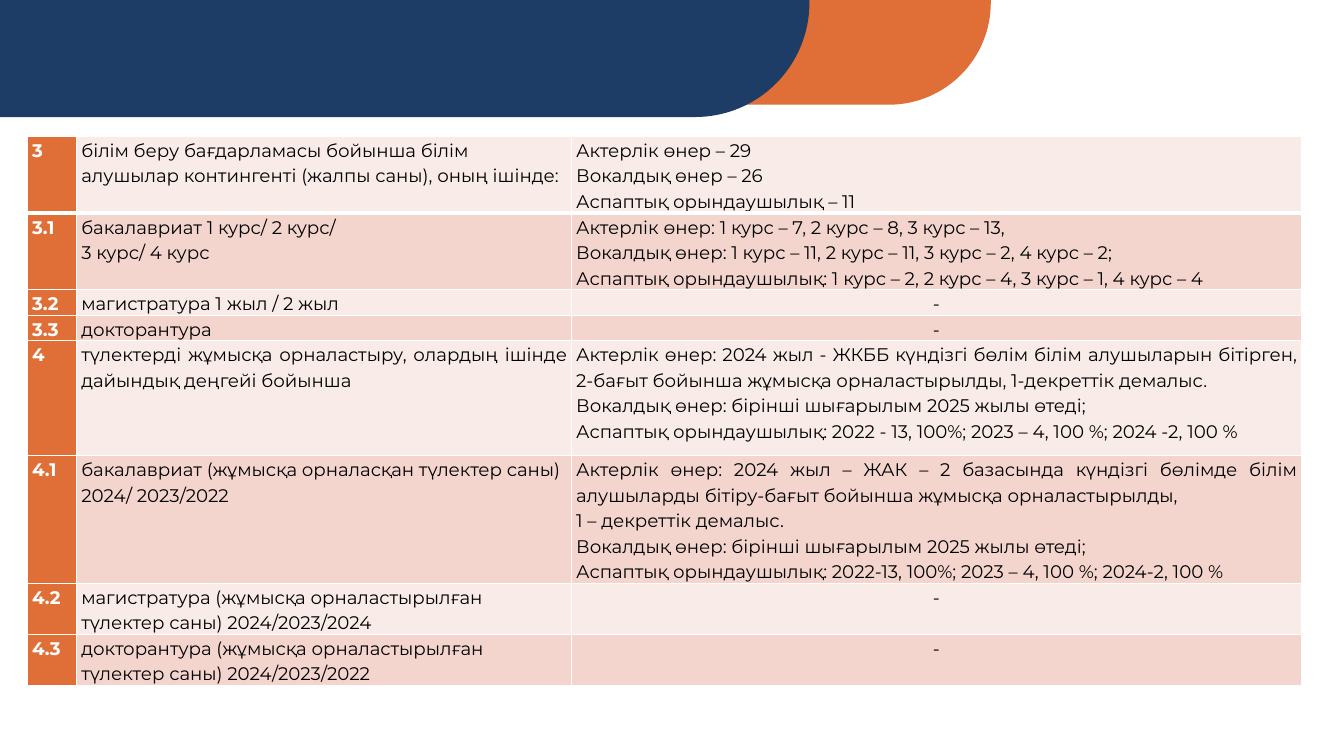
import math

from lxml import etree
from pptx import Presentation
from pptx import util as u
from pptx.dml.color import RGBColor
from pptx.enum import text
from pptx.oxml.ns import qn

NAVY, ORANGE, WHITE, BLACK = "1D3D66", "E06E37", "FFFFFF", "000000"
BANDS = ["F9EBE8", "F3D5CE"]
LEFT, CENTER, JUSTIFY = text.PP_ALIGN.LEFT, text.PP_ALIGN.CENTER, text.PP_ALIGN.JUSTIFY

COLUMNS = [1.24, 12.47, 18.39]
ROWS = [
    (1.93, "3", ["білім беру бағдарламасы бойынша білім алушылар контингенті (жалпы саны), оның ішінде:"],
     ["Актерлік өнер – 29", "Вокалдық өнер – 26", "Аспаптық орындаушылық – 11"]),
    (1.93, "3.1", ["бакалавриат 1 курс/ 2 курс/", "3 курс/ 4 курс"],
     ["Актерлік өнер: 1 курс – 7, 2 курс – 8, 3 курс – 13,",
      "Вокалдық өнер: 1 курс – 11, 2 курс – 11, 3 курс – 2, 4 курс – 2;",
      "Аспаптық орындаушылық: 1 курс – 2, 2 курс – 4, 3 курс – 1, 4 курс – 4"]),
    (0.64, "3.2", ["магистратура 1 жыл / 2 жыл"], ["-"]),
    (0.64, "3.3", ["докторантура"], ["-"]),
    (2.9, "4", ["түлектерді жұмысқа орналастыру, олардың ішінде дайындық деңгейі бойынша"],
     ["Актерлік өнер: 2024 жыл - ЖКББ күндізгі бөлім білім алушыларын бітірген, "
      "2-бағыт бойынша жұмысқа орналастырылды, 1-декреттік демалыс.",
      "Вокалдық өнер: бірінші шығарылым 2025 жылы өтеді;",
      "Аспаптық орындаушылық: 2022 - 13, 100%; 2023 – 4, 100 %; 2024 -2, 100 %"]),
    (3.2, "4.1", ["бакалавриат (жұмысқа орналасқан түлектер саны) 2024/ 2023/2022"],
     ["Актерлік өнер: 2024 жыл – ЖАК – 2 базасында күндізгі бөлімде білім алушыларды "
      "бітіру-бағыт бойынша жұмысқа орналастырылды,",
      "1 – декреттік демалыс.",
      "Вокалдық өнер: бірінші шығарылым 2025 жылы өтеді;",
      "Аспаптық орындаушылық: 2022-13, 100%; 2023 – 4, 100 %; 2024-2, 100 %"]),
    (1.28, "4.2", ["магистратура (жұмысқа орналастырылған түлектер саны) 2024/2023/2024"], ["-"]),
    (1.28, "4.3", ["докторантура (жұмысқа орналастырылған түлектер саны) 2024/2023/2022"], ["-"]),
]


def paint(fill, color):
    fill.solid()
    fill.fore_color.rgb = RGBColor.from_string(color)


def write(tf, lines, font="Montserrat", size=13, color=BLACK, bold=False, align=LEFT, spacing=1.15):
    for i, line in enumerate(lines):
        p = tf.paragraphs[0] if i == 0 else tf.add_paragraph()
        p.alignment, p.line_spacing = align, spacing
        r = p.add_run()
        r.text = line
        r.font.name, r.font.size, r.font.bold = font, u.Pt(size), bold
        r.font.color.rgb = RGBColor.from_string(color)


class Deck:
    def __init__(self):
        self.prs = Presentation()
        self.prs.slide_width, self.prs.slide_height = u.Cm(33.87), u.Cm(19.05)
        self.slide = self.prs.slides.add_slide(self.prs.slide_layouts[6])

    def banner(self, left, width, height, radius, color):
        right, steps = left + width, 32
        angles = [math.pi / 2 * i / steps for i in range(steps + 1)]
        arc = [(right - radius + radius * math.cos(a), height - radius + radius * math.sin(a))
               for a in angles]
        points = [(u.Cm(x), u.Cm(y)) for x, y in [(right, 0), *arc, (left, height)]]
        builder = self.slide.shapes.build_freeform(u.Cm(left), 0)
        builder.add_line_segments(points, close=True)
        sp = builder.convert_to_shape()
        sp.shadow.inherit = False
        paint(sp.fill, color)
        sp.line.fill.background()

    def border(self, cell, side, width):
        tc_pr = cell._tc.get_or_add_tcPr()
        ln = etree.SubElement(tc_pr, qn(f"a:ln{side}"), w=str(u.Pt(width)))
        fill = etree.SubElement(ln, qn("a:solidFill"))
        etree.SubElement(fill, qn("a:srgbClr"), val=WHITE)

    def cell(self, cell, lines, fill, edges, **style):
        cell.margin_left = cell.margin_right = u.Cm(0.12)
        cell.margin_top = cell.margin_bottom = 0
        for side in "LRTB":
            self.border(cell, side, edges.get(side, 1))
        paint(cell.fill, fill)
        write(cell.text_frame, lines, **style)

    def table(self, left, top, columns, rows):
        height = sum(row[0] for row in rows)
        table = self.slide.shapes.add_table(len(rows), len(columns), u.Cm(left), u.Cm(top),
                                            u.Cm(sum(columns)), u.Cm(height)).table
        table.first_row = table.horz_banding = False
        for column, width in zip(table.columns, columns):
            column.width = u.Cm(width)
        for i, (height, number, topic, details) in enumerate(rows):
            table.rows[i].height = u.Cm(height)
            edges = {0: {"B": 3}, 1: {"T": 3}}.get(i, {})
            band = BANDS[i % 2]
            self.cell(table.cell(i, 0), [number], ORANGE, edges, color=WHITE, bold=True)
            self.cell(table.cell(i, 1), topic, band, edges, align=JUSTIFY if number == "4" else LEFT)
            self.cell(table.cell(i, 2), details, band, edges,
                      align=CENTER if details == ["-"] else JUSTIFY)


def main():
    deck = Deck()
    deck.banner(6.73, 18.24, 2.64, 2.57, ORANGE)
    deck.banner(0, 20.4, 2.95, 2.88, NAVY)
    deck.table(0.69, 3.44, COLUMNS, ROWS)
    deck.prs.save("out.pptx")


if __name__ == "__main__":
    main()
